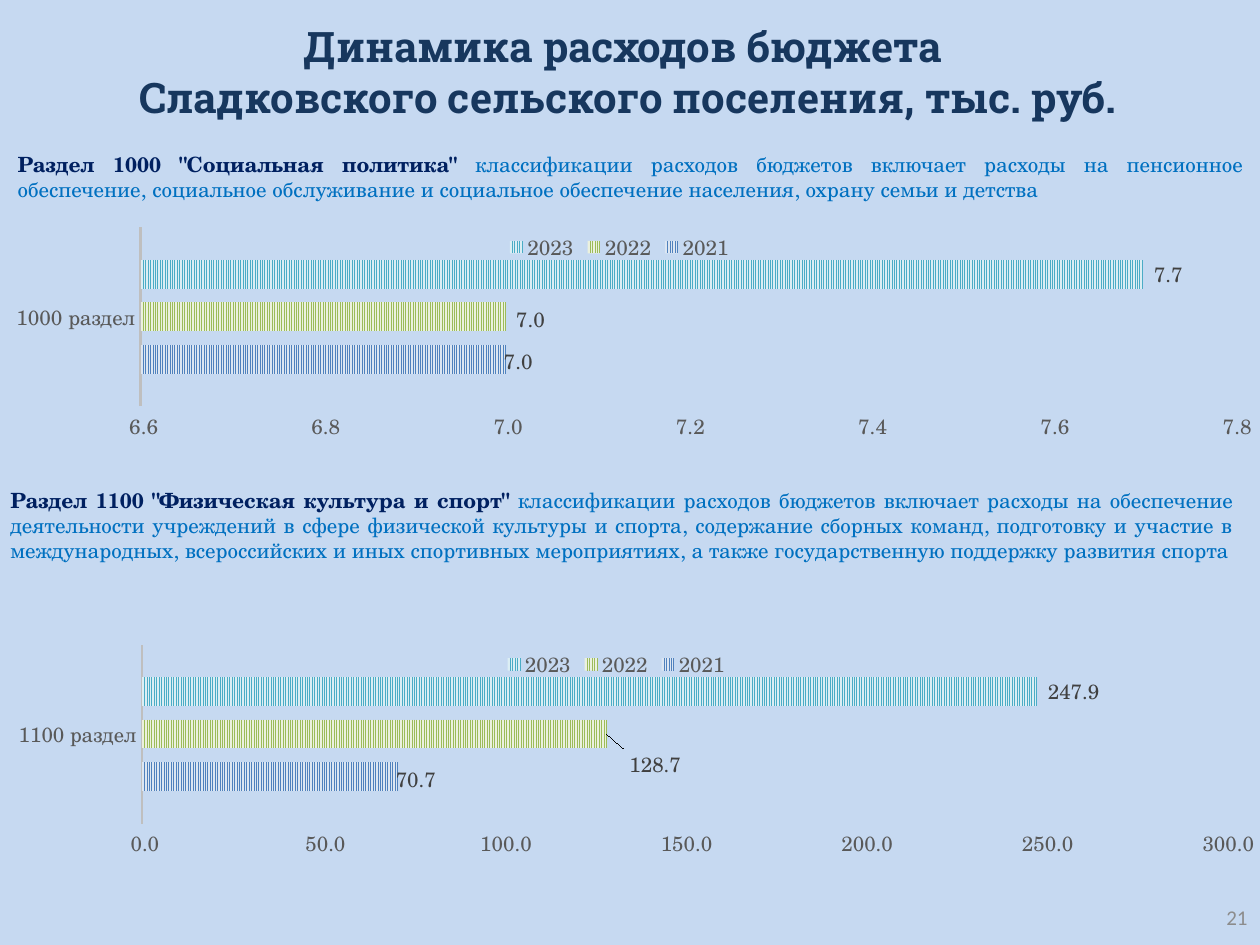
"""Build a budget slide with two clustered bar charts of yearly spending."""
from lxml.etree import SubElement
from pptx import Presentation
from pptx.chart.data import CategoryChartData
from pptx.dml.color import RGBColor
from pptx.enum.chart import XL_CHART_TYPE as CT, XL_LABEL_POSITION as LP
from pptx.enum.chart import XL_LEGEND_POSITION as LEG, XL_TICK_MARK as TM
from pptx.enum.dml import MSO_PATTERN
from pptx.enum.text import MSO_ANCHOR as MA, PP_ALIGN as AL
from pptx.oxml import parse_xml
from pptx.oxml.ns import nsdecls, qn
from pptx.util import Pt

BACKGROUND = RGBColor(0xC6, 0xD9, 0xF1)
TITLE = RGBColor(0x17, 0x37, 0x5E)
NAVY = RGBColor(0x00, 0x20, 0x60)
BLUE = RGBColor(0x00, 0x70, 0xC0)
PAGE_GRAY = RGBColor(0x8C, 0x8C, 0x8C)
AXIS_TEXT = RGBColor(0x59, 0x59, 0x59)
LABEL_TEXT = RGBColor(0x40, 0x40, 0x40)
AXIS_LINE = RGBColor(0xBF, 0xBF, 0xBF)
STRIPES = {
    "2021": (RGBColor(0x4F, 0x81, 0xBD), RGBColor(0xDC, 0xE6, 0xF2)),
    "2022": (RGBColor(0x9B, 0xBB, 0x59), RGBColor(0xEB, 0xF1, 0xDE)),
    "2023": (RGBColor(0x4B, 0xAC, 0xC6), RGBColor(0xDB, 0xEE, 0xF4)),
}
SERIF = "TeX Gyre Schola"
NUMBER = r"#\ ##0.0"
NO_LEADERS = (
    f'<c:extLst {nsdecls("c")}><c:ext uri="{{CE6537A1-D6FC-4f65-9D91-7224C49458BB}}" '
    'xmlns:c15="http://schemas.microsoft.com/office/drawing/2012/chart">'
    '<c15:showLeaderLines val="0"/></c:ext></c:extLst>'
)


def set_font(font, color, **values):
    """Apply format values and a colour to a font."""
    for name, value in {"name": SERIF, "size": Pt(12), "bold": False, **values}.items():
        setattr(font, name, value)
    font.color.rgb = color


def add_text(slide, box, runs, align, anchor=MA.TOP):
    """Add one paragraph made of (text, colour, format) runs."""
    tf = slide.shapes.add_textbox(*map(Pt, box)).text_frame
    tf.word_wrap, tf.vertical_anchor = True, anchor
    p = tf.paragraphs[0]
    p.alignment = align
    for text, color, values in runs:
        for i, line in enumerate(text.split("\n")):
            if i:
                p.add_line_break()
            r = p.add_run()
            r.text = line
            set_font(r.font, color, **values)


def add_section(slide, box, heading, body):
    """Add a justified description with a bold heading."""
    add_text(slide, box, [(heading, NAVY, {"bold": True}), (body, BLUE, {})], AL.JUSTIFY)


def make_layout(**values):
    """Return a manual chart layout element."""
    layout = parse_xml(f"<c:layout {nsdecls('c')}><c:manualLayout/></c:layout>")
    for tag, value in values.items():
        SubElement(layout[0], qn(f"c:{tag}")).set("val", str(value))
    return layout


def add_legend(chart):
    """Place the legend in the strip above the bars."""
    chart.has_legend = True
    legend = chart.legend
    legend.position, legend.include_in_layout = LEG.TOP, False
    set_font(legend.font, AXIS_TEXT)
    element = next(chart._chartSpace.iter(qn("c:legend")))
    for old in element.findall(qn("c:layout")):
        element.remove(old)
    element.find(qn("c:legendPos")).addnext(make_layout(
        xMode="edge", yMode="edge", x=0.4, y=0.03, w=0.19, h=0.12))


def style_axes(chart, low, high, step):
    """Format the category and value axes."""
    cat, val = chart.category_axis, chart.value_axis
    for axis in (cat, val):
        axis.major_tick_mark = axis.minor_tick_mark = TM.NONE
        axis.has_major_gridlines = False
        set_font(axis.tick_labels.font, AXIS_TEXT)
    cat.format.line.color.rgb = AXIS_LINE
    cat.format.line.width = Pt(1.5)
    val.format.line.fill.background()
    scale = {"minimum_scale": low, "maximum_scale": high, "major_unit": step}
    for name, value in scale.items():
        setattr(val, name, value)
    val.tick_labels.number_format = NUMBER
    val.tick_labels.number_format_is_linked = False


def style_series(series, shift):
    """Fill a series with stripes and label its bar, moved by shift."""
    fill = series.format.fill
    fill.patterned()
    fill.pattern = MSO_PATTERN.NARROW_VERTICAL
    fill.fore_color.rgb, fill.back_color.rgb = STRIPES[series.name]
    labels = series.data_labels
    labels.show_value, labels.position = True, LP.OUTSIDE_END
    labels.number_format, labels.number_format_is_linked = NUMBER, False
    set_font(labels.font, LABEL_TEXT)
    if shift:
        label = series.points[0].data_label
        set_font(label.font, LABEL_TEXT)
        label.position = LP.OUTSIDE_END
        idx = next(series._element.iter(qn("c:dLbl"))).find(qn("c:idx"))
        idx.addnext(make_layout(x=shift[0], y=shift[1]))
    series._element.find(qn("c:dLbls")).append(parse_xml(NO_LEADERS))


def add_bars(slide, box, category, values, scale, shifts):
    """Add a clustered bar chart with one bar a year."""
    data = CategoryChartData(number_format=NUMBER)
    data.categories = [category]
    for year, value in zip(STRIPES, values):
        data.add_series(year, [value])
    chart = slide.shapes.add_chart(CT.BAR_CLUSTERED, *map(Pt, box), data).chart
    chart.has_title = False
    chart.font.name, chart.font.size = "Calibri", Pt(10)
    add_legend(chart)
    plot = chart.plots[0]
    plot.gap_width, plot.overlap, plot.vary_by_categories = 227, -48, False
    style_axes(chart, *scale)
    for series in plot.series:
        style_series(series, shifts.get(series.name))
    area = next(chart._chartSpace.iter(qn("c:plotArea")))
    for old in area.findall(qn("c:layout")):
        area.remove(old)
    area.insert(0, make_layout(layoutTarget="inner", xMode="edge", yMode="edge",
                               x=0.105, y=0.007, w=0.891, h=0.843))


def main():
    """Build and save the slide."""
    prs = Presentation()
    prs.slide_width, prs.slide_height = Pt(720), Pt(540)
    slide = prs.slides.add_slide(prs.slide_layouts[6])
    slide.background.fill.solid()
    slide.background.fill.fore_color.rgb = BACKGROUND

    title = "Динамика расходов бюджета \nСладковского сельского поселения, тыс. руб."
    title_font = {"name": "Roboto Slab", "size": Pt(24), "bold": True}
    add_text(slide, (-1.2, 13, 720, 55.5), [(title, TITLE, title_font)], AL.CENTER, MA.MIDDLE)
    add_bars(slide, (6.8, 129, 708.5, 123), "1000 раздел", (7, 7, 7.7),
             (6.6, 7.8, 0.2), {"2021": (-0.01, 0.01), "2022": (0, 0.01)})
    add_text(slide, (552, 510, 168, 28.5), [("21", PAGE_GRAY, {"name": "Calibri"})],
             AL.RIGHT, MA.MIDDLE)
    add_section(slide, (3, 83, 715, 79), 'Раздел 1000 "Социальная политика" ',
                "классификации расходов бюджетов включает расходы на пенсионное "
                "обеспечение, социальное обслуживание и социальное обеспечение "
                "населения, охрану семьи и детства")
    add_section(slide, (-1.2, 275, 713.5, 79), 'Раздел 1100 "Физическая культура и спорт" ',
                "классификации расходов бюджетов включает расходы на обеспечение "
                "деятельности учреждений в сфере физической культуры и спорта, "
                "содержание сборных команд, подготовку и участие в международных, "
                "всероссийских и иных спортивных мероприятиях, а также "
                "государственную поддержку развития спорта")
    add_bars(slide, (8.2, 367.5, 708.5, 123), "1100 раздел", (70.7, 128.7, 247.9),
             (0, 300, 50), {"2021": (-0.01, 0.01), "2022": (0.01, 0.14)})
    prs.save("out.pptx")


if __name__ == "__main__":
    main()
